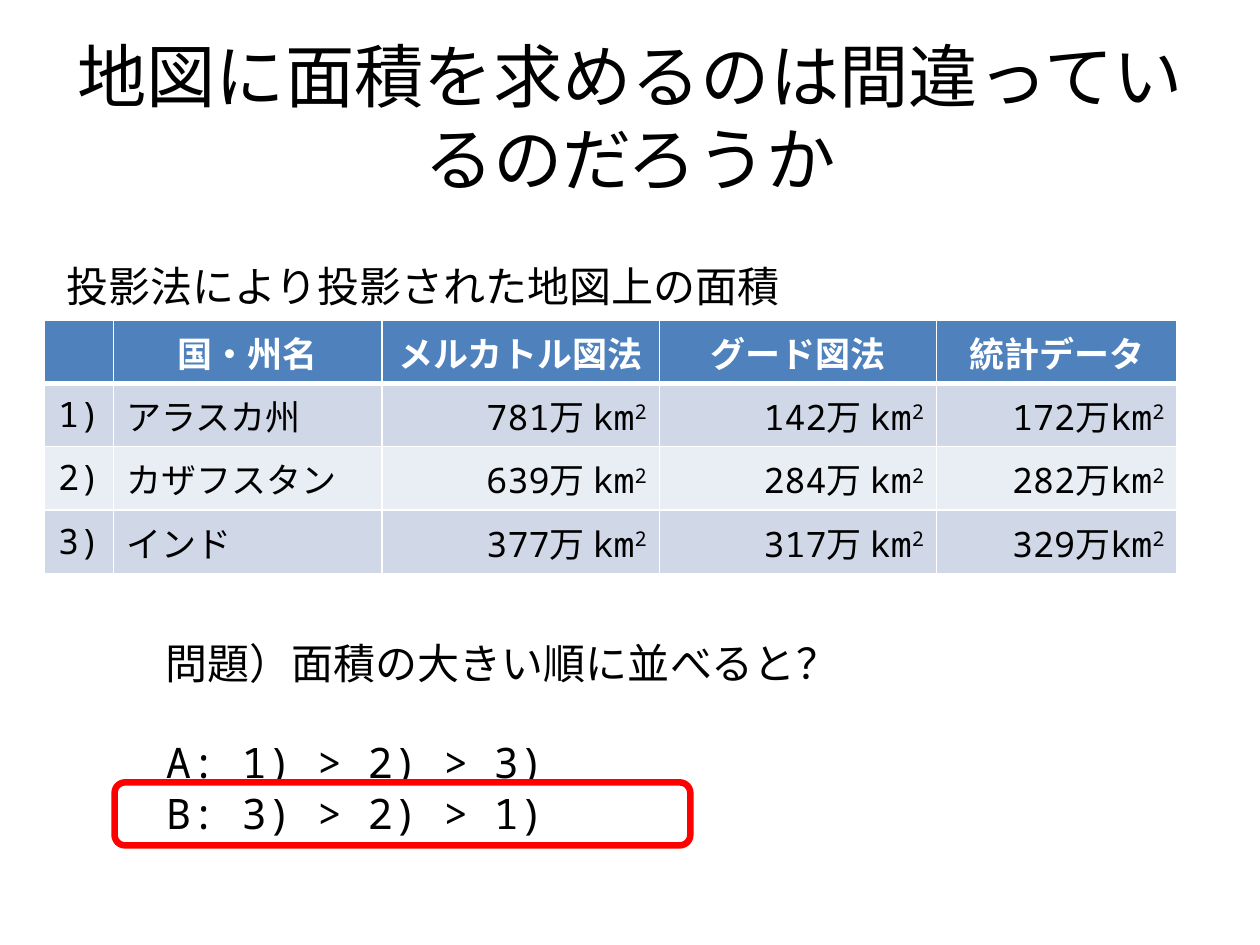
from lxml.etree import SubElement
from pptx import Presentation
from pptx.dml.color import RGBColor
from pptx.enum.shapes import MSO_SHAPE
from pptx.enum.text import MSO_ANCHOR, PP_ALIGN
from pptx.oxml.ns import qn
from pptx.util import Pt

FONT = "Noto Sans Mono"
BLACK, WHITE, RED = "000000", "FFFFFF", "FF0000"
BLUE, BANDS = "4F81BD", ("D0D8E8", "E9EDF4")
LEFT, MID, RIGHT = PP_ALIGN.LEFT, PP_ALIGN.CENTER, PP_ALIGN.RIGHT

HEAD = ["", "国・州名", "メルカトル図法", "グード図法", "統計データ"]
ROWS = [
    ["1)", "アラスカ州", "781万 km", "142万 km", "172万km"],
    ["2)", "カザフスタン", "639万 km", "284万 km", "282万km"],
    ["3)", "インド", "377万 km", "317万 km", "329万km"],
]
ALIGNS = [MID, LEFT, RIGHT, RIGHT, RIGHT]
WIDTHS = [39.6, 153.4, 158.4, 158.4, 137.5]


def color(code):
    return RGBColor.from_string(code)


def add_run(para, text, size, code=BLACK, bold=False, asian=True, base=0):
    run = para.add_run()
    run.text = text
    font = run.font
    font.name, font.size, font.bold = FONT, Pt(size), bold
    font.color.rgb = color(code)
    props = run._r.get_or_add_rPr()
    if asian:
        SubElement(props, qn("a:ea")).set("typeface", FONT)
    if base:
        props.set("baseline", str(base * 1000))


def add_text(slide, box, lines, size, align=LEFT, anchor=MSO_ANCHOR.TOP, gap=0):
    """Text box; gap is the space between the first line and the rest."""
    frame = slide.shapes.add_textbox(*map(Pt, box)).text_frame
    frame.word_wrap = True
    frame.vertical_anchor = anchor
    for i, line in enumerate(lines):
        para = frame.add_paragraph() if i else frame.paragraphs[0]
        para.alignment = align
        if i == 1:
            para.space_before = Pt(gap)
        add_run(para, line, size)


def style_cell(cell, fill, foot):
    """White borders, with a lower edge of the given width, then the fill."""
    props = cell._tc.get_or_add_tcPr()
    for side, width in (("L", 1), ("R", 1), ("T", 1), ("B", foot)):
        line = SubElement(props, qn(f"a:ln{side}"), w=str(Pt(width)))
        paint = SubElement(line, qn("a:solidFill"))
        SubElement(paint, qn("a:srgbClr"), val=WHITE)
    cell.fill.solid()
    cell.fill.fore_color.rgb = color(fill)


def add_areas(slide, left, top, high):
    rows = [HEAD] + ROWS
    box = (left, top, sum(WIDTHS), high * len(rows))
    table = slide.shapes.add_table(len(rows), len(HEAD), *map(Pt, box)).table
    for col, width in zip(table.columns, WIDTHS):
        col.width = Pt(width)
    for r, row in enumerate(rows):
        table.rows[r].height = Pt(high)
        for c, text in enumerate(row):
            cell = table.cell(r, c)
            style_cell(cell, BANDS[(r - 1) % 2] if r else BLUE, 1 if r else 3)
            para = cell.text_frame.paragraphs[0]
            para.alignment = ALIGNS[c] if r else MID
            para.font.size = Pt(20)
            if text:
                add_run(para, text, 20, BLACK if r else WHITE, not r, False)
            if r and c > 1:
                add_run(para, "2", 20, asian=False, base=30)


def add_quiz(slide, left, top):
    lines = ["問題）面積の大きい順に並べると？", "A: 1) > 2) > 3)", "B: 3) > 2) > 1)"]
    add_text(slide, (left, top, 476, 124), lines, 24, gap=28)
    # Frame around the right answer
    box = (left - 22.3, top + 86.4, 329, 36)
    mark = slide.shapes.add_shape(MSO_SHAPE.ROUNDED_RECTANGLE, *map(Pt, box))
    mark.shadow.inherit = False
    mark.fill.background()
    mark.line.color.rgb = color(RED)
    mark.line.width = Pt(3.75)


def main():
    deck = Presentation()
    deck.slide_width, deck.slide_height = Pt(720), Pt(540)
    slide = deck.slides.add_slide(deck.slide_layouts[6])
    # Title
    add_text(slide, (36, 21.6, 648, 90), ["地図に面積を求めるのは間違っているのだろうか"],
             39.6, MID, MSO_ANCHOR.MIDDLE)
    # Table with its caption
    add_areas(slide, 25.4, 182.9, 36.2)
    add_text(slide, (31, 145.4, 442, 36), ["投影法により投影された地図上の面積"], 24)
    # Question and answers
    add_quiz(slide, 87.8, 360.7)
    deck.save("out.pptx")


if __name__ == "__main__":
    main()
